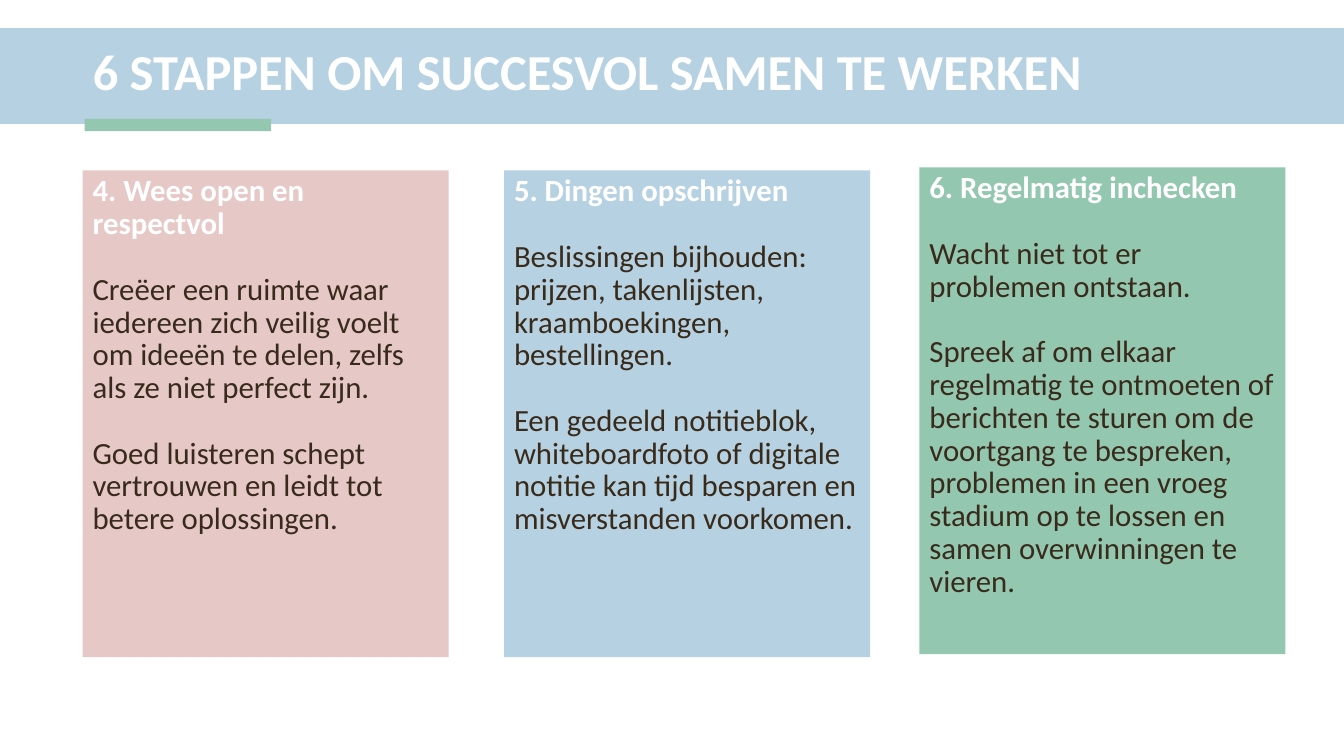
from typing import NamedTuple

from pptx import Presentation
from pptx.dml.color import RGBColor
from pptx.enum.shapes import MSO_SHAPE
from pptx.enum.text import MSO_ANCHOR, PP_ALIGN
from pptx.shapes.autoshape import Shape
from pptx.slide import Slide
from pptx.text.text import _Paragraph as Paragraph
from pptx.util import Inches, Pt

WHITE = RGBColor(0xFF, 0xFF, 0xFF)
BROWN = RGBColor(0x38, 0x2B, 0x1B)
BLUE = RGBColor(0xB6, 0xD1, 0xE1)
GREEN = RGBColor(0x94, 0xC7, 0xB0)
PINK = RGBColor(0xE6, 0xC8, 0xC7)

FONT = "Calibri"
LINE_HEIGHT = Pt(23.4)
CARD_WIDTH, CARD_HEIGHT = 3.63, 4.83


class Card(NamedTuple):
    left: float
    top: float
    color: RGBColor
    heading: str
    body: tuple[str, ...]


CARDS = (
    Card(0.82, 1.69, PINK, "4. Wees open en respectvol", (
        "Creëer een ruimte waar iedereen zich veilig voelt om ideeën te delen, "
        "zelfs als ze niet perfect zijn.",
        "Goed luisteren schept vertrouwen en leidt tot betere oplossingen.",
    )),
    Card(5, 1.69, BLUE, "5. Dingen opschrijven", (
        "Beslissingen bijhouden: prijzen, takenlijsten, kraamboekingen, bestellingen.",
        "Een gedeeld notitieblok, whiteboardfoto of digitale notitie kan tijd "
        "besparen en misverstanden voorkomen.",
    )),
    Card(9.12, 1.66, GREEN, "6. Regelmatig inchecken", (
        "Wacht niet tot er problemen ontstaan.",
        "Spreek af om elkaar regelmatig te ontmoeten of berichten te sturen om de "
        "voortgang te bespreken, problemen in een vroeg stadium op te lossen en "
        "samen overwinningen te vieren.",
    )),
)


def add_rectangle(slide: Slide, left: float, top: float, width: float,
                  height: float, color: RGBColor) -> Shape:
    shape = slide.shapes.add_shape(
        MSO_SHAPE.RECTANGLE, Inches(left), Inches(top), Inches(width), Inches(height))
    shape.shadow.inherit = False
    shape.fill.solid()
    shape.fill.fore_color.rgb = color
    shape.line.fill.background()
    return shape


def add_run(paragraph: Paragraph, text: str, size: float, color: RGBColor,
            bold: bool) -> None:
    paragraph.alignment = PP_ALIGN.LEFT
    run = paragraph.add_run()
    run.text = text
    run.font.name = FONT
    run.font.size = Pt(size)
    run.font.bold = bold
    run.font.color.rgb = color


def add_card(slide: Slide, card: Card) -> None:
    shape = add_rectangle(slide, card.left, card.top, CARD_WIDTH, CARD_HEIGHT, card.color)
    frame = shape.text_frame
    frame.word_wrap = True
    frame.vertical_anchor = MSO_ANCHOR.TOP
    heading = frame.paragraphs[0]
    heading.line_spacing = LINE_HEIGHT
    add_run(heading, card.heading, 22, WHITE, True)
    for text in card.body:
        paragraph = frame.add_paragraph()
        paragraph.line_spacing = LINE_HEIGHT
        paragraph.space_before = LINE_HEIGHT
        add_run(paragraph, text, 22, BROWN, False)


def add_title(slide: Slide, text: str) -> None:
    title = slide.shapes.title
    title.left, title.top = Inches(0.82), Inches(0.34)
    title.width, title.height = Inches(11.93), Inches(0.79)
    frame = title.text_frame
    frame.word_wrap = True
    frame.vertical_anchor = MSO_ANCHOR.MIDDLE
    paragraph = frame.paragraphs[0]
    paragraph.line_spacing = 0.9
    add_run(paragraph, text, 36, WHITE, True)
    # Bring the title in front of the band
    title.element.getparent().append(title.element)


def main() -> None:
    presentation = Presentation()
    presentation.slide_width = Inches(13.33)
    presentation.slide_height = Inches(7.5)
    slide = presentation.slides.add_slide(presentation.slide_layouts[5])

    # Title band with accent bar
    add_rectangle(slide, 0, 0.28, 13.33, 0.95, BLUE)
    add_rectangle(slide, 0.84, 1.18, 1.85, 0.12, GREEN)
    add_title(slide, "6 STAPPEN OM SUCCESVOL SAMEN TE WERKEN")

    # Step cards
    for card in CARDS:
        add_card(slide, card)

    presentation.save("out.pptx")


if __name__ == "__main__":
    main()
